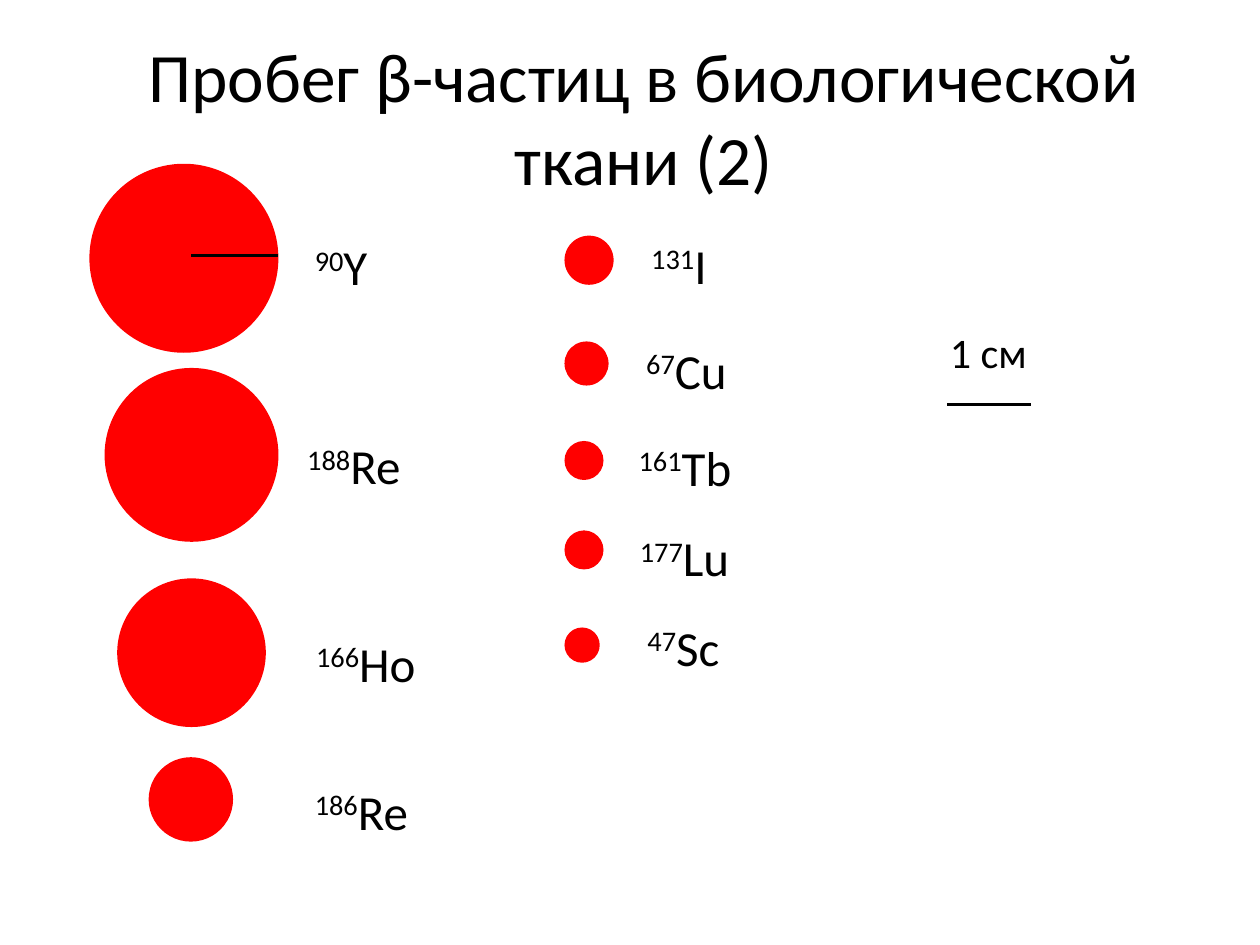
"""Build a slide comparing beta-particle ranges in biological tissue."""
from dataclasses import dataclass

from lxml.etree import SubElement
from pptx import Presentation
from pptx.dml.color import RGBColor
from pptx.enum.shapes import MSO_CONNECTOR, MSO_SHAPE
from pptx.enum.text import MSO_ANCHOR, MSO_AUTO_SIZE, PP_ALIGN
from pptx.oxml.ns import qn
from pptx.slide import Slide
from pptx.util import Inches, Pt

RED, BLACK = "FF0000", "000000"


@dataclass
class Isotope:
    mass: str
    symbol: str
    left: float
    top: float
    diameter: float
    label_left: float
    label_top: float
    label_width: float


ISOTOPES = [
    Isotope("90", "Y", 0.71, 1.3, 1.5, 2.4, 1.83, 0.66),
    Isotope("188", "Re", 0.83, 2.92, 1.38, 2.34, 3.41, 1),
    Isotope("166", "Ho", 0.93, 4.59, 1.18, 2.41, 4.98, 1.05),
    Isotope("186", "Re", 1.18, 6.01, 0.67, 2.4, 6.15, 1),
    Isotope("131", "I", 4.48, 1.87, 0.39, 5.07, 1.82, 0.7),
    Isotope("67", "Cu", 4.48, 2.71, 0.35, 5.03, 2.65, 0.88),
    Isotope("161", "Tb", 4.48, 3.5, 0.31, 4.97, 3.42, 1),
    Isotope("177", "Lu", 4.48, 4.21, 0.31, 4.98, 4.14, 0.97),
    Isotope("47", "Sc", 4.48, 4.98, 0.28, 5.04, 4.85, 0.82),
]


def rgb(value: str) -> RGBColor:
    return RGBColor.from_string(value)


def add_run(p, text: str, size: float, superscript: bool = False) -> None:
    r = p.add_run()
    r.text = text
    for name, value in {"name": "Calibri", "size": Pt(size)}.items():
        setattr(r.font, name, value)
    r.font.color.rgb = rgb(BLACK)
    if superscript:
        r.font._element.set("baseline", "30000")


def add_label(s: Slide, left: float, top: float, width: float, height: float):
    tf = s.shapes.add_textbox(*map(Inches, (left, top, width, height))).text_frame
    for name, value in {"word_wrap": False, "auto_size": MSO_AUTO_SIZE.SHAPE_TO_FIT_TEXT}.items():
        setattr(tf, name, value)
    return tf.paragraphs[0]


def add_isotope(s: Slide, iso: Isotope) -> None:
    box = (iso.left, iso.top, iso.diameter, iso.diameter)
    sp = s.shapes.add_shape(MSO_SHAPE.OVAL, *map(Inches, box))
    sp.shadow.inherit = False
    sp.fill.solid()
    sp.fill.fore_color.rgb = rgb(RED)
    sp.line.fill.background()
    p = add_label(s, iso.label_left, iso.label_top, iso.label_width, 0.57)
    add_run(p, iso.mass, 28, superscript=True)
    add_run(p, iso.symbol, 28)


def add_line(s: Slide, left: float, right: float, y: float) -> None:
    sp = s.shapes.add_connector(MSO_CONNECTOR.STRAIGHT, *map(Inches, (left, y, right, y)))
    sp.line.color.rgb = rgb(BLACK)
    sp.line.width = Pt(1.5)
    SubElement(sp._element.spPr, qn("a:effectLst"))


def add_title(s: Slide, text: str) -> None:
    sp = s.shapes.title
    box = {"left": 0.5, "top": 0.3, "width": 9.22, "height": 1.25}
    for name, value in box.items():
        setattr(sp, name, Inches(value))
    tf = sp.text_frame
    frame = {"word_wrap": True, "auto_size": MSO_AUTO_SIZE.NONE, "vertical_anchor": MSO_ANCHOR.MIDDLE}
    for name, value in frame.items():
        setattr(tf, name, value)
    p = tf.paragraphs[0]
    p.alignment = PP_ALIGN.CENTER
    add_run(p, text, 39.6)


def main() -> None:
    prs = Presentation()
    prs.slide_width, prs.slide_height = Inches(10), Inches(7.5)
    s = prs.slides.add_slide(prs.slide_layouts[5])
    add_title(s, "Пробег β-частиц в биологической ткани (2)")
    for iso in ISOTOPES:
        add_isotope(s, iso)
    add_line(s, 7.52, 8.18, 3.21)
    add_run(add_label(s, 7.44, 2.54, 0.82, 0.5), "1 см", 24)
    add_line(s, 1.52, 2.21, 2.03)
    prs.save("out.pptx")


if __name__ == "__main__":
    main()
